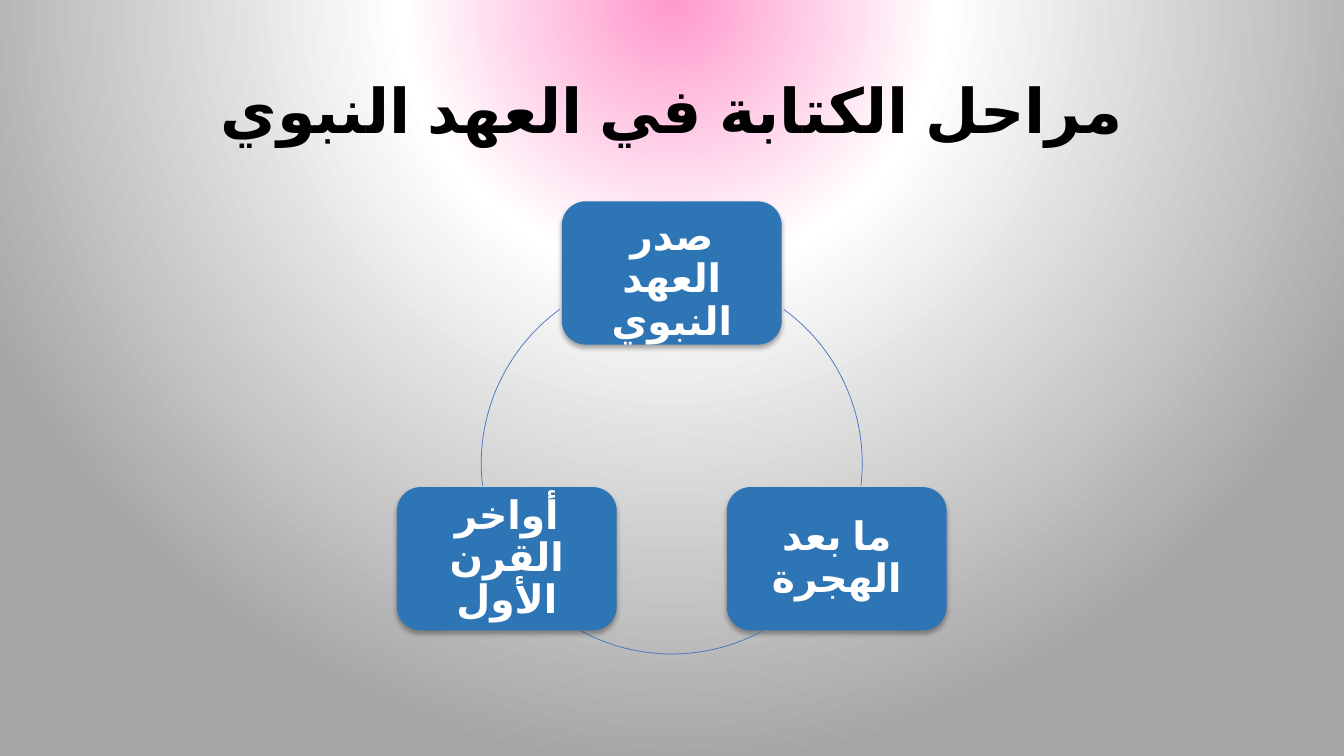
from dataclasses import dataclass
from math import cos, radians, sin

from pptx import Presentation
from pptx.dml.color import RGBColor
from pptx.enum.lang import MSO_LANGUAGE_ID
from pptx.enum.shapes import MSO_SHAPE
from pptx.enum.text import MSO_ANCHOR, PP_ALIGN
from pptx.oxml import parse_xml
from pptx.oxml.ns import nsdecls, qn
from pptx.util import Cm, Pt

ROUNDED, ARC = MSO_SHAPE.ROUNDED_RECTANGLE, MSO_SHAPE.ARC
MIDDLE, CENTER = MSO_ANCHOR.MIDDLE, PP_ALIGN.CENTER
ARABIC = MSO_LANGUAGE_ID.ARABIC
TITLE_ONLY = 5


@dataclass(frozen=True)
class Theme:
    font: str = "Calibri"
    title_size: int = 44
    node_size: int = 28
    title: str = "000000"
    node_text: str = "FFFFFF"
    node: str = "2E75B6"
    arc: str = "4472C4"
    shadow: str = "000000"
    background: tuple = ((0, "FF99CC"), (35, "FFFFFF"), (100, "A5A5A5"))


def write(tf, text, *, font, size, color, bold=True, inset=0, top=0):
    """Fill a text frame with one centred right-to-left paragraph."""
    tf.word_wrap = True
    tf.vertical_anchor = MIDDLE
    tf.margin_left = tf.margin_right = Cm(inset)
    tf.margin_top, tf.margin_bottom = Cm(top), 0
    p = tf.paragraphs[0]
    p.alignment = CENTER
    p.line_spacing = 0.9
    p._p.get_or_add_pPr().set("rtl", "1")
    r = p.add_run()
    r.text = text
    r.font.name = font
    r.font.size = Pt(size)
    r.font.bold = bold
    r.font.language_id = ARABIC
    r.font.color.rgb = RGBColor.from_string(color)


class CycleSlide:
    """A titled slide with nodes and arcs on one circle (centimetres, degrees)."""

    center_x, center_y, radius = 16.93, 11.68, 4.8
    node_w, node_h = 5.54, 3.61

    def __init__(self, prs, theme):
        self.theme = theme
        self.s = prs.slides.add_slide(prs.slide_layouts[TITLE_ONLY])

    def background(self):
        stops = "".join(
            f'<a:gs pos="{pos * 1000}"><a:srgbClr val="{color}"/></a:gs>'
            for pos, color in self.theme.background)
        self.s._element.cSld.insert(0, parse_xml(
            f'<p:bg {nsdecls("p", "a")}><p:bgPr><a:gradFill rotWithShape="1">'
            f'<a:gsLst>{stops}</a:gsLst><a:path path="circle">'
            '<a:fillToRect l="50000" t="-80000" r="50000" b="180000"/></a:path>'
            '</a:gradFill><a:effectLst/></p:bgPr></p:bg>'))

    def title(self, text):
        sp = self.s.shapes.title
        sp.left, sp.top, sp.width, sp.height = Cm(2.33), Cm(1.01), Cm(29.21), Cm(3.68)
        write(sp.text_frame, text, font=self.theme.font,
              size=self.theme.title_size, color=self.theme.title)

    def node(self, text, angle, top=0):
        x = self.center_x + self.radius * cos(radians(angle)) - self.node_w / 2
        y = self.center_y + self.radius * sin(radians(angle)) - self.node_h / 2
        sp = self.s.shapes.add_shape(
            ROUNDED, Cm(x), Cm(y), Cm(self.node_w), Cm(self.node_h))
        sp.fill.solid()
        sp.fill.fore_color.rgb = RGBColor.from_string(self.theme.node)
        sp.line.fill.background()
        self.drop_shadow(sp)
        write(sp.text_frame, text, font=self.theme.font, size=self.theme.node_size,
              color=self.theme.node_text, inset=0.48, top=top)

    def drop_shadow(self, sp):
        sp.shadow.inherit = False
        sp._element.spPr.find(qn("a:effectLst")).append(parse_xml(
            f'<a:outerShdw {nsdecls("a")} blurRad="{Pt(3.5)}" dist="{Pt(2.2)}" '
            f'dir="5400000" rotWithShape="0"><a:srgbClr val="{self.theme.shadow}">'
            '<a:alpha val="32000"/></a:srgbClr></a:outerShdw>'))

    def arc(self, start, end):
        size = Cm(2 * self.radius)
        sp = self.s.shapes.add_shape(
            ARC, Cm(self.center_x - self.radius), Cm(self.center_y - self.radius),
            size, size)
        # Angles are stored in 60000ths of a degree, adjustments in 100000ths.
        sp.adjustments[0], sp.adjustments[1] = start * 0.6, end * 0.6
        sp.fill.background()
        sp.line.color.rgb = RGBColor.from_string(self.theme.arc)
        sp.line.width = Pt(0.5)
        sp.shadow.inherit = False


def main():
    prs = Presentation()
    prs.slide_width, prs.slide_height = Cm(33.87), Cm(19.05)
    slide = CycleSlide(prs, Theme())
    slide.background()
    slide.title("مراحل الكتابة في العهد النبوي")
    stages = [
        ("صدر العهد النبوي", 270, 0.36, (306, 6.7)),
        ("ما بعد الهجرة", 30, 0, (61.5, 118.5)),
        ("أواخر القرن الأول", 150, 0, (173.3, 234)),
    ]
    for text, angle, top, (start, end) in stages:
        slide.node(text, angle, top)
        slide.arc(start, end)
    prs.save("out.pptx")


if __name__ == "__main__":
    main()
